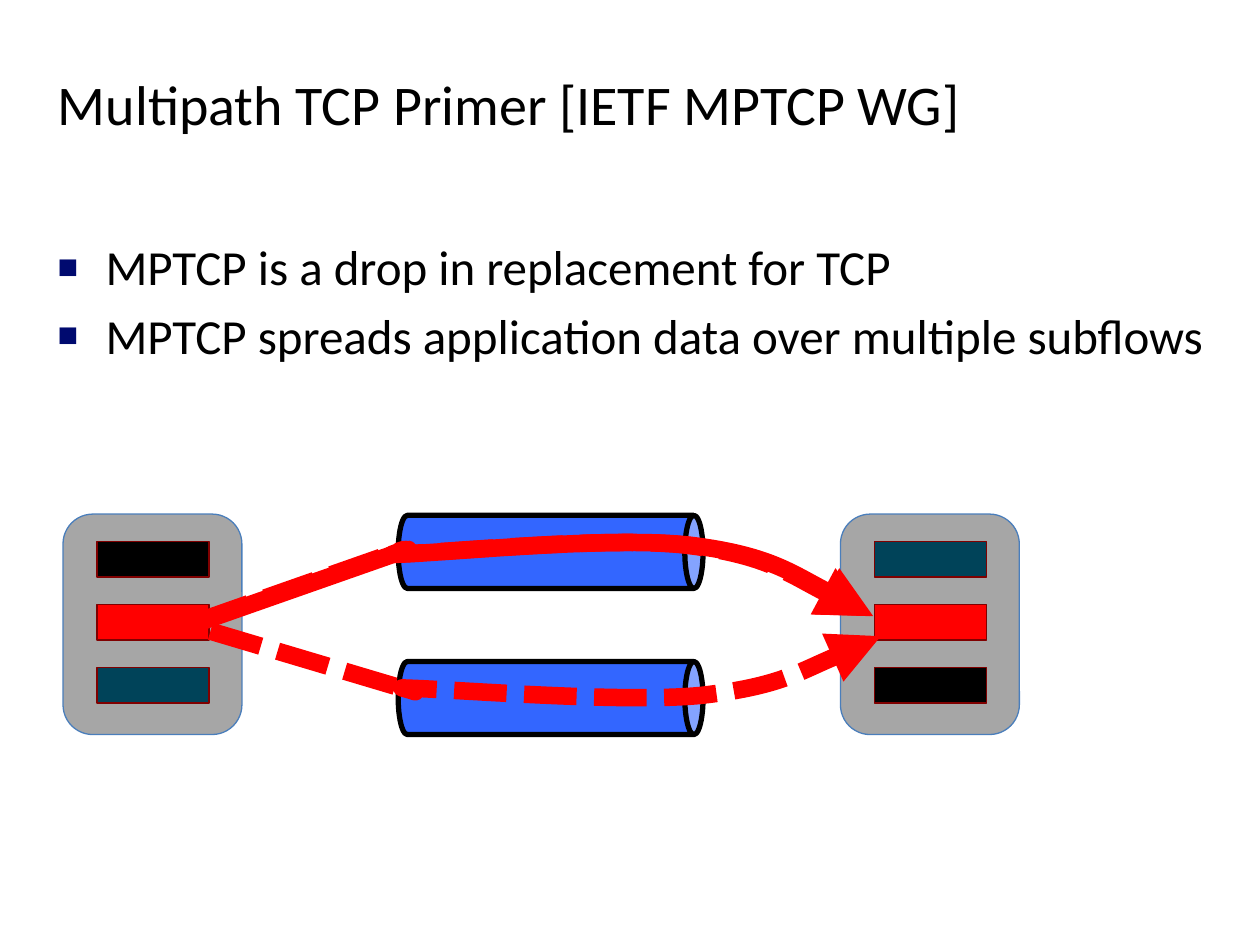
from lxml.etree import SubElement
from pptx import Presentation
from pptx.dml.color import RGBColor
from pptx.enum.dml import MSO_LINE
from pptx.enum.shapes import MSO_SHAPE
from pptx.enum.text import MSO_ANCHOR, PP_ALIGN
from pptx.oxml.ns import qn
from pptx.util import Inches, Pt

TITLE = "Multipath TCP Primer [IETF MPTCP WG]"
POINTS = [
    "MPTCP is a drop in replacement for TCP",
    "MPTCP spreads application data over multiple subflows",
]
INK = {
    "text": "000000", "mark": "000A6F", "host": "A6A6A6", "rim": "4A7EBB",
    "black": "000000", "red": "FF0000", "teal": "004359", "edge": "800000",
    "pipe": "3366FF",
}
HOSTS = [(0.5, ["black", "red", "teal"]), (6.67, ["teal", "red", "black"])]
PIPES = [3.17, 4.33]
UPPER = [
    (1.61, 4.93), (3.12, 4.4),
    (3.38, 4.31), (3.14, 4.4), (3.14, 4.4),
    (3.53, 4.39), (4.87, 4.25), (5.5, 4.33),
    (6.13, 4.41), (6.93, 4.89), (6.93, 4.89),
]
LOWER = [
    (1.67, 5.01), (3.18, 5.46),
    (3.44, 5.53), (3.19, 5.46), (3.19, 5.46),
    (3.59, 5.47), (4.92, 5.58), (5.56, 5.52),
    (6.19, 5.45), (6.99, 5.05), (6.99, 5.05),
]
FLOWS = [(UPPER, 0, False), (UPPER, -0.03, True), (LOWER, 0, True)]
TOP, ROW = 4.08, 0.5


def tint(name):
    return RGBColor.from_string(INK[name])


def place(item, left, top, width, height):
    item.left, item.top = Inches(left), Inches(top)
    item.width, item.height = Inches(width), Inches(height)


def style(par, size):
    par.alignment = PP_ALIGN.LEFT
    for run in par.runs:
        run.font.size = Pt(size)
        run.font.name = "Calibri"
        run.font.color.rgb = tint("text")


def bullet(par):
    props = par._p.get_or_add_pPr()
    props.set("marL", str(Inches(0.38)))
    props.set("indent", str(-Inches(0.38)))
    space = SubElement(SubElement(props, qn("a:spcBef")), qn("a:spcPct"))
    space.set("val", "20000")
    color = SubElement(SubElement(props, qn("a:buClr")), qn("a:srgbClr"))
    color.set("val", INK["mark"])
    SubElement(props, qn("a:buSzPct")).set("val", "70000")
    SubElement(props, qn("a:buFont")).set("typeface", "Arial")
    SubElement(props, qn("a:buChar")).set("char", "■")


def block(slide, kind, box, fill, line, width):
    shape = slide.shapes.add_shape(kind, *map(Inches, box))
    shape.shadow.inherit = False
    shape.fill.solid()
    shape.fill.fore_color.rgb = tint(fill)
    shape.line.color.rgb = tint(line)
    shape.line.width = Pt(width)
    return shape


def host(slide, left, slots):
    block(slide, MSO_SHAPE.ROUNDED_RECTANGLE, (left, TOP, 1.42, 1.75), "host", "rim", 0.75)
    for row, fill in enumerate(slots):
        box = (left + 0.27, TOP + 0.22 + row * ROW, 0.89, 0.28)
        block(slide, MSO_SHAPE.RECTANGLE, box, fill, "edge", 0.75)


def bend(shape):
    steps = shape._element.findall(".//" + qn("a:lnTo"))[1:]
    for start in range(0, len(steps), 3):
        group = steps[start:start + 3]
        curve = group[0].makeelement(qn("a:cubicBezTo"), {})
        group[0].addprevious(curve)
        for step in group:
            curve.append(step[0])
            step.getparent().remove(step)


def flow(slide, points, shift, dashed):
    spots = [(Inches(x + shift), Inches(y)) for x, y in points]
    pen = slide.shapes.build_freeform(*spots[0], scale=1.0)
    pen.add_line_segments(spots[1:], close=False)
    shape = pen.convert_to_shape()
    bend(shape)
    shape.shadow.inherit = False
    shape.fill.background()
    shape.line.color.rgb = tint("red")
    shape.line.width = Pt(10)
    if dashed:
        shape.line.dash_style = MSO_LINE.SQUARE_DOT
        shape.line._ln.find(qn("a:prstDash")).set("val", "sysDash")
    SubElement(shape.line._ln, qn("a:tailEnd")).set("type", "triangle")


def main():
    deck = Presentation()
    deck.slide_width, deck.slide_height = Inches(10), Inches(7.5)
    slide = deck.slides.add_slide(deck.slide_layouts[5])
    title = slide.shapes.title
    place(title, 0.36, 0.5, 9.28, 1.09)
    title.text_frame.text = TITLE
    title.text_frame.vertical_anchor = MSO_ANCHOR.TOP
    style(title.text_frame.paragraphs[0], 32)

    body = slide.shapes.add_textbox(0, 0, 0, 0)
    place(body, 0.36, 1.83, 9.28, 4.24)
    frame = body.text_frame
    frame.word_wrap = True
    frame.margin_right = 0
    frame.text = "\n".join(POINTS)
    for par in frame.paragraphs:
        style(par, 28)
        bullet(par)

    for left, slots in HOSTS:
        host(slide, left, slots)
    for top in PIPES:
        pipe = block(slide, MSO_SHAPE.CAN, (4.08, top, 0.58, 2.42), "pipe", "black", 3)
        pipe.rotation = 90
    for points, shift, dashed in FLOWS:
        flow(slide, points, shift, dashed)
    deck.save("out.pptx")


if __name__ == "__main__":
    main()
